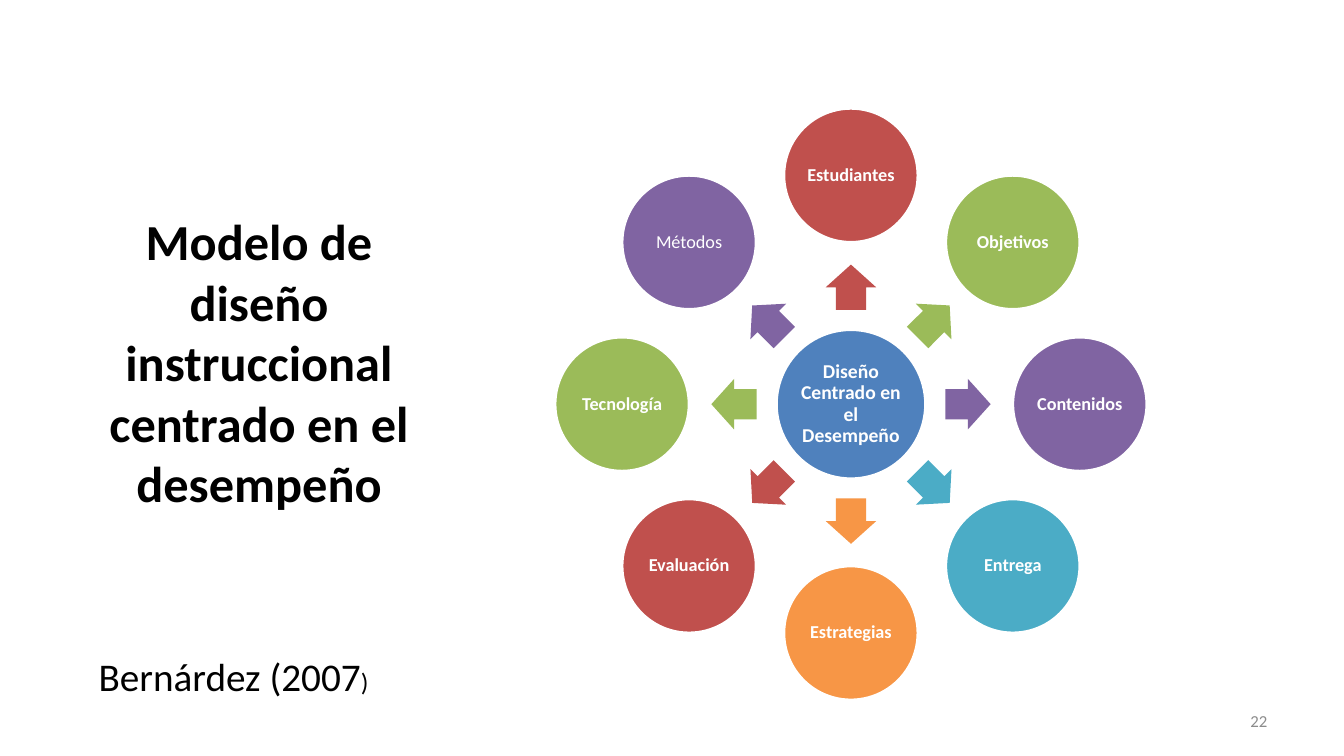
from math import cos, radians, sin

from pptx import Presentation
from pptx.dml.color import RGBColor
from pptx.enum.shapes import MSO_SHAPE
from pptx.enum.text import MSO_ANCHOR, MSO_AUTO_SIZE, PP_ALIGN
from pptx.util import Inches, Pt

OVAL, ARROW = MSO_SHAPE.OVAL, MSO_SHAPE.RIGHT_ARROW
TOP, MIDDLE = MSO_ANCHOR.TOP, MSO_ANCHOR.MIDDLE
LEFT, CENTER, RIGHT = PP_ALIGN.LEFT, PP_ALIGN.CENTER, PP_ALIGN.RIGHT
NO_AUTOFIT = MSO_AUTO_SIZE.NONE

COLORS = {
    "black": "000000", "white": "FFFFFF", "gray": "8C8C8C", "blue": "4F81BD",
    "red": "C0504D", "green": "9BBB59", "purple": "8064A2", "aqua": "4BACC6",
    "orange": "F79646",
}
HUB_X, HUB_Y = 8.44, 4.01
TOPIC_RADIUS, ARROW_RADIUS = 2.27, 1.16
TOPICS = [
    ("Estudiantes", "red", True), ("Objetivos", "green", True),
    ("Contenidos", "purple", True), ("Entrega", "aqua", True),
    ("Estrategias", "orange", True), ("Evaluación", "red", True),
    ("Tecnología", "green", True), ("Métodos", "purple", False),
]


class ModelSlide:
    """Draws the elements of the model on one slide in a shared style."""

    def __init__(self, slide, font_name="Calibri"):
        self.slide = slide
        self.font_name = font_name

    def color(self, name):
        return RGBColor.from_string(COLORS[name])

    def set_text(self, shape, runs, color, bold=False, align=CENTER, anchor=MIDDLE, inset=None):
        frame = shape.text_frame
        settings = {"word_wrap": True, "auto_size": NO_AUTOFIT, "vertical_anchor": anchor}
        if inset is not None:
            for side in ("left", "right", "top", "bottom"):
                settings[f"margin_{side}"] = Inches(inset)
        for name, value in settings.items():
            setattr(frame, name, value)
        paragraph = frame.paragraphs[0]
        paragraph.alignment = align
        for text, size in runs:
            run = paragraph.add_run()
            run.text = text
            for name, value in {"name": self.font_name, "size": Pt(size), "bold": bold}.items():
                setattr(run.font, name, value)
            run.font.color.rgb = self.color(color)
        return paragraph

    def title(self, text, box):
        heading = self.slide.shapes.title
        for name, value in zip(("left", "top", "width", "height"), box):
            setattr(heading, name, Inches(value))
        self.set_text(heading, [(text, 36)], "black", bold=True)

    def label(self, runs, box, color, align, anchor):
        label = self.slide.shapes.add_textbox(*map(Inches, box))
        self.set_text(label, runs, color, align=align, anchor=anchor)

    def centered(self, kind, x, y, width, height, fill):
        shape = self.slide.shapes.add_shape(
            kind, Inches(x - width / 2), Inches(y - height / 2), Inches(width), Inches(height))
        shape.shadow.inherit = False
        shape.fill.solid()
        shape.fill.fore_color.rgb = self.color(fill)
        return shape

    def circle(self, text, x, y, diameter, fill, size, bold):
        circle = self.centered(OVAL, x, y, diameter, diameter, fill)
        circle.line.color.rgb = self.color("white")
        circle.line.width = Pt(2)
        paragraph = self.set_text(circle, [(text, size)], "white", bold=bold, inset=0.02)
        paragraph.line_spacing = 0.9

    def arrow(self, x, y, angle, fill):
        arrow = self.centered(ARROW, x, y, 0.45, 0.5, fill)
        arrow.line.fill.background()
        arrow.adjustments[0] = 0.6
        arrow.adjustments[1] = 0.5
        arrow.rotation = angle % 360


def main():
    presentation = Presentation()
    presentation.slide_width = Inches(13.33)
    presentation.slide_height = Inches(7.5)
    model = ModelSlide(presentation.slides.add_slide(presentation.slide_layouts[5]))

    model.title("Modelo de diseño instruccional centrado en el desempeño", (0.88, 0.75, 3.38, 5.67))
    model.label([("22", 12)], (9.56, 6.95, 3.11, 0.4), "gray", RIGHT, MIDDLE)
    model.circle("Diseño Centrado en el Desempeño", HUB_X, HUB_Y, 1.48, "blue", 14, True)
    for position, (topic, fill, bold) in enumerate(TOPICS):
        angle = position * 360 / len(TOPICS) - 90
        across, down = cos(radians(angle)), sin(radians(angle))
        model.arrow(HUB_X + ARROW_RADIUS * across, HUB_Y + ARROW_RADIUS * down, angle, fill)
        model.circle(topic, HUB_X + TOPIC_RADIUS * across, HUB_Y + TOPIC_RADIUS * down,
                     1.33, fill, 13, bold)
    model.label([("Bernárdez (2007", 28), (")", 18)], (0.88, 6.42, 4.12, 0.57), "black", LEFT, TOP)
    presentation.save("out.pptx")


if __name__ == "__main__":
    main()
